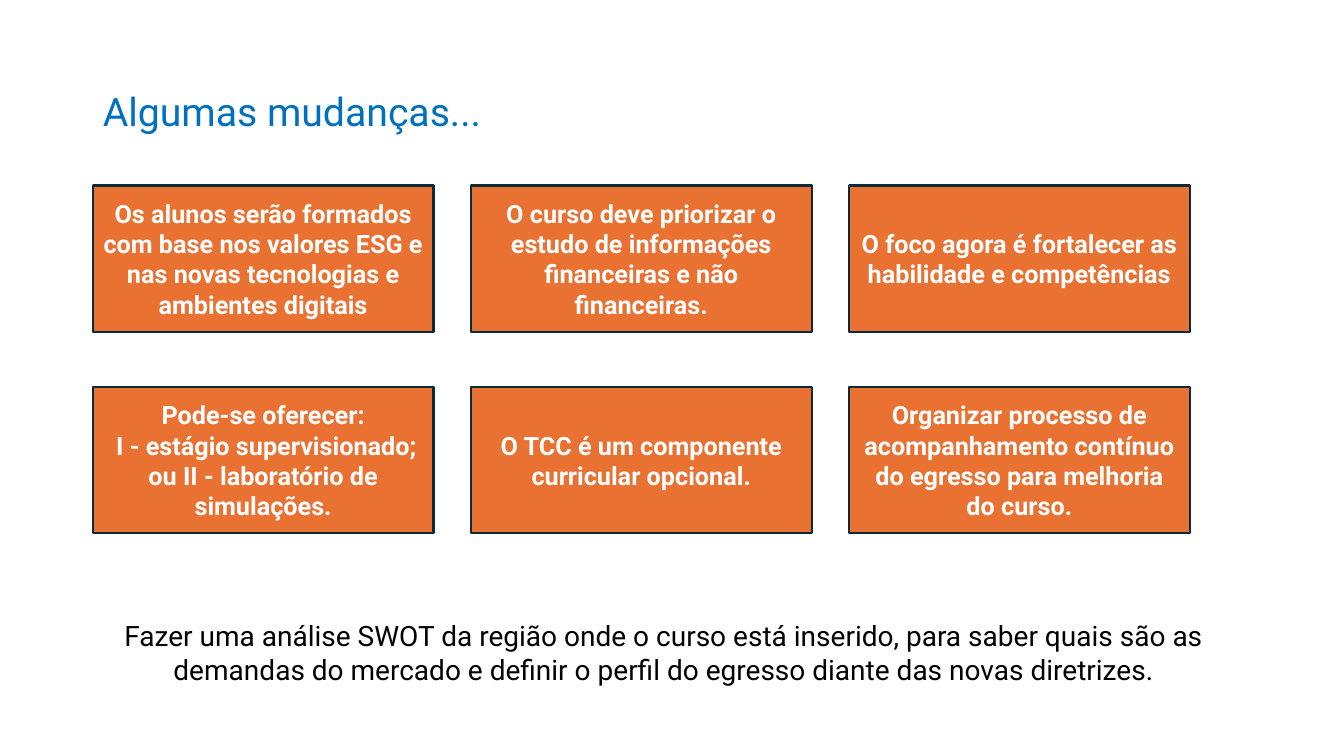
from pptx import Presentation
from pptx.dml.color import RGBColor
from pptx.enum.shapes import MSO_SHAPE
from pptx.enum.text import MSO_ANCHOR, MSO_AUTO_SIZE, PP_ALIGN
from pptx.util import Inches, Pt

FONT = "Roboto"
BLUE = RGBColor(0x00, 0x70, 0xC0)
ORANGE = RGBColor(0xE9, 0x71, 0x32)
NAVY = RGBColor(0x09, 0x2A, 0x39)
WHITE = RGBColor(0xFF, 0xFF, 0xFF)
BLACK = RGBColor(0x00, 0x00, 0x00)

LEFT = 0.92
CARD_TOP, CARD_WIDTH, CARD_HEIGHT = 1.84, 3.38, 1.45
COLUMN_STEP, ROW_STEP = 3.75, 2

CHANGES = [
    [
        "Os alunos serão formados com base nos valores ESG e nas novas tecnologias e ambientes digitais",
        "O curso deve priorizar o estudo de informações financeiras e não financeiras.",
        "O foco agora é fortalecer as habilidade e competências",
    ],
    [
        "Pode-se oferecer:\n I - estágio supervisionado; ou II - laboratório de simulações.",
        "O TCC é um componente curricular opcional.",
        "Organizar processo de acompanhamento contínuo do egresso para melhoria do curso.",
    ],
]
CONCLUSION = (
    "Fazer uma análise SWOT da região onde o curso está inserido, para saber quais são as "
    "demandas do mercado e definir o perfil do egresso diante das novas diretrizes."
)


def write_text(frame, text, size, color, align, bold=False):
    frame.word_wrap = True
    frame.text = text
    for paragraph in frame.paragraphs:
        paragraph.alignment = align
        paragraph.font.name = FONT
        paragraph.font.size = Pt(size)
        paragraph.font.bold = bold
        paragraph.font.color.rgb = color


def format_title(slide, text):
    title = slide.shapes.title
    title.left, title.top = Inches(LEFT), Inches(0.4)
    title.width, title.height = Inches(11.5), Inches(1.45)
    frame = title.text_frame
    write_text(frame, text, 28, BLUE, PP_ALIGN.LEFT)
    frame.vertical_anchor = MSO_ANCHOR.MIDDLE
    frame.paragraphs[0].line_spacing = 0.9


def add_card(slide, left, top, text):
    card = slide.shapes.add_shape(
        MSO_SHAPE.RECTANGLE, Inches(left), Inches(top), Inches(CARD_WIDTH), Inches(CARD_HEIGHT)
    )
    card.shadow.inherit = False
    card.fill.solid()
    card.fill.fore_color.rgb = ORANGE
    card.line.color.rgb = NAVY
    card.line.width = Pt(1.5)
    card.text_frame.vertical_anchor = MSO_ANCHOR.MIDDLE
    write_text(card.text_frame, text, 18, WHITE, PP_ALIGN.CENTER, bold=True)


def add_conclusion(slide, text):
    box = slide.shapes.add_textbox(Inches(LEFT), Inches(6.09), Inches(11.33), Inches(0.77))
    write_text(box.text_frame, text, 20, BLACK, PP_ALIGN.CENTER)
    box.text_frame.auto_size = MSO_AUTO_SIZE.SHAPE_TO_FIT_TEXT


def main():
    presentation = Presentation()
    presentation.slide_width = Inches(13.33)
    presentation.slide_height = Inches(7.5)
    slide = presentation.slides.add_slide(presentation.slide_layouts[5])

    format_title(slide, "Algumas mudanças...")
    for row, texts in enumerate(CHANGES):
        for column, text in enumerate(texts):
            add_card(slide, LEFT + column * COLUMN_STEP, CARD_TOP + row * ROW_STEP, text)
    add_conclusion(slide, CONCLUSION)

    presentation.save("out.pptx")


if __name__ == "__main__":
    main()
